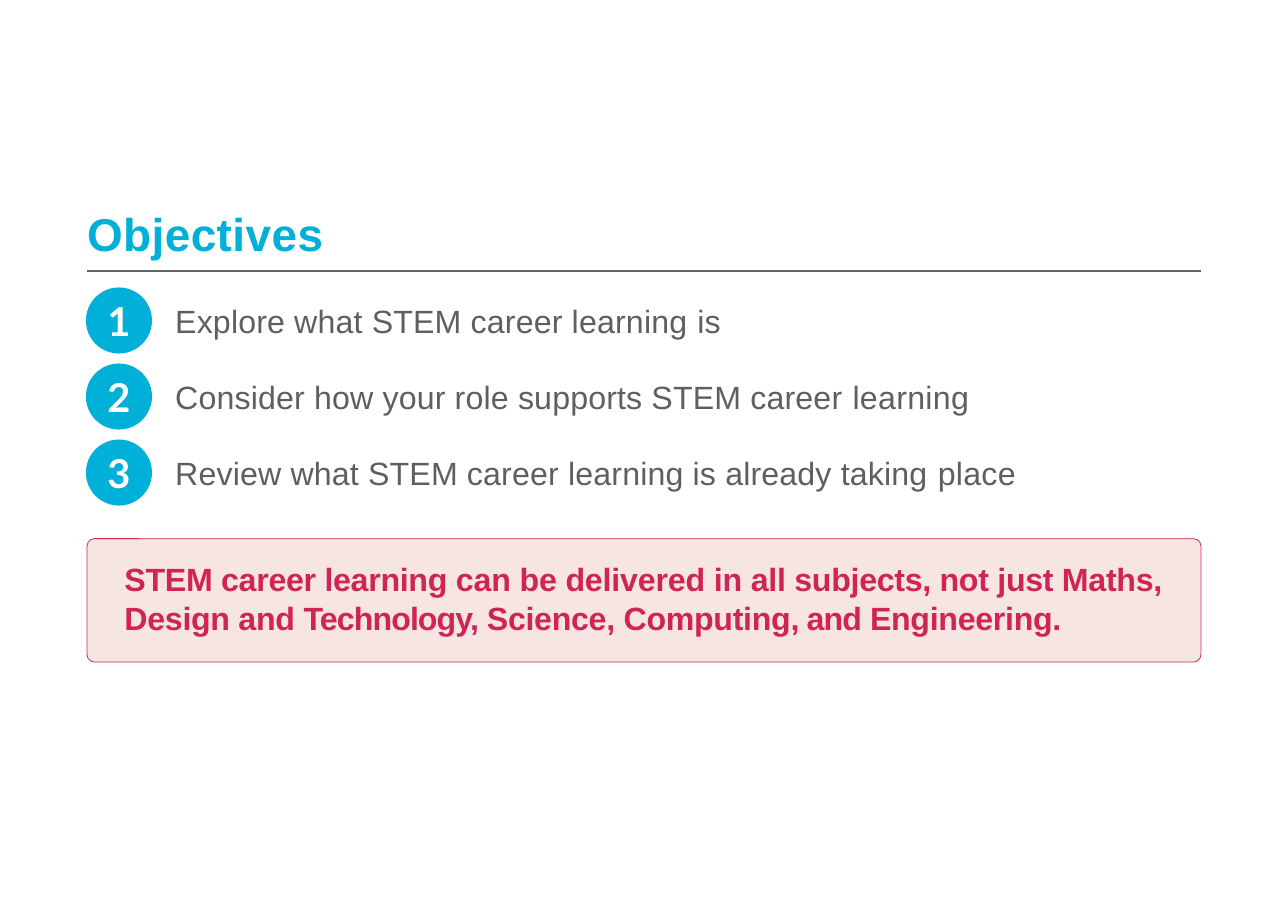
import pptx
import pptx.dml.color
import pptx.enum.shapes
import pptx.enum.text
import pptx.oxml.ns
import pptx.util
from lxml import etree

HEADING = [("Objectives", 0.3)]
OBJECTIVES = [
    [("Explore what STEM career learning ", 0.1), ("is", 0.2)],
    [("Consider how your role supports STEM career ", 0.1), ("learning", 0.2)],
    [("Review what STEM career learning is already taking ", 0.1), ("place", 0.2)],
]
MESSAGE = [
    ("STEM career learning ", -0.2),
    ("can be delivered in ", -0.1),
    ("all subjects, not just Maths, Design and ", -0.2),
    ("Technology, ", -0.6),
    ("Science, Computing", -0.2),
    (", and ", -0.6),
    ("Engineering.", -0.2),
]

CYAN, GREY, RULE_GREY = "00B0D8", "5D5F61", "636466"
CRIMSON, BLUSH, WHITE = "CF2553", "F7E5E3", "FFFFFF"

WIDTH, HEIGHT = 11.69, 8.27
MARGIN = 0.79
CONTENT_WIDTH = WIDTH - 2 * MARGIN
RULE_TOP = 2.46
BADGE = 0.6
FIRST_ROW, ROW_PITCH = 2.61, 0.69
OBJECTIVE_LEFT = 1.59
MESSAGE_TOP, MESSAGE_HEIGHT = 4.89, 1.12

inches = pptx.util.Inches
shapes_enum = pptx.enum.shapes.MSO_SHAPE
align = pptx.enum.text.PP_ALIGN
anchors = pptx.enum.text.MSO_ANCHOR


def colour(hex_string):
    return pptx.dml.color.RGBColor.from_string(hex_string)


def box(left, top, width, height):
    return [inches(length) for length in (left, top, width, height)]


def write(shape, pieces, size, ink, font="Arial", bold=False,
          alignment=align.LEFT, anchor=anchors.MIDDLE, margins=(0, 0, 0, 0)):
    frame = shape.text_frame
    frame.word_wrap = True
    frame.auto_size = pptx.enum.text.MSO_AUTO_SIZE.NONE
    frame.vertical_anchor = anchor
    (frame.margin_left, frame.margin_top,
     frame.margin_right, frame.margin_bottom) = [inches(m) for m in margins]
    paragraph = frame.paragraphs[0]
    paragraph.alignment = alignment
    for words, spacing in pieces:
        run = paragraph.add_run()
        run.text = words
        run.font.name = font
        run.font.size = pptx.util.Pt(size)
        run.font.bold = bold
        run.font.color.rgb = colour(ink)
        run.font._element.set("spc", str(round(spacing * 100)))


def filled(slide, preset, place, fill):
    shape = slide.shapes.add_shape(preset, *place)
    shape.shadow.inherit = False
    shape.fill.solid()
    shape.fill.fore_color.rgb = colour(fill)
    shape.line.fill.background()
    return shape


def add_heading(slide):
    title = slide.shapes.title
    title.left, title.top, title.width, title.height = box(
        MARGIN, 1.84, CONTENT_WIDTH, 0.55)
    write(title, HEADING, 30, CYAN, bold=True)
    rule = slide.shapes.add_connector(
        pptx.enum.shapes.MSO_CONNECTOR.STRAIGHT,
        inches(MARGIN), inches(RULE_TOP),
        inches(MARGIN + CONTENT_WIDTH), inches(RULE_TOP))
    rule.line.color.rgb = colour(RULE_GREY)
    rule.line.width = pptx.util.Pt(1)
    etree.SubElement(rule._element.spPr, pptx.oxml.ns.qn("a:effectLst"))


def add_objectives(slide):
    for row, objective in enumerate(OBJECTIVES):
        top = FIRST_ROW + row * ROW_PITCH
        badge = filled(slide, shapes_enum.OVAL,
                       box(MARGIN - 0.01, top, BADGE, BADGE), CYAN)
        write(badge, [(str(row + 1), 0.1)], 26, WHITE, font="Lato",
              bold=True, alignment=align.CENTER)
        label = slide.shapes.add_textbox(*box(
            OBJECTIVE_LEFT, top, MARGIN + CONTENT_WIDTH - OBJECTIVE_LEFT, BADGE))
        write(label, objective, 21, GREY)


def add_message(slide):
    panel = filled(slide, shapes_enum.ROUNDED_RECTANGLE,
                   box(MARGIN, MESSAGE_TOP, CONTENT_WIDTH, MESSAGE_HEIGHT), BLUSH)
    panel.adjustments[0] = 0.06
    panel.line.color.rgb = colour(CRIMSON)
    panel.line.width = pptx.util.Pt(0.5)
    write(panel, MESSAGE, 21, CRIMSON, bold=True, anchor=anchors.TOP,
          margins=(0.32, 0.17, 0.1, 0))


def main():
    deck = pptx.Presentation()
    deck.slide_width, deck.slide_height = inches(WIDTH), inches(HEIGHT)
    slide = deck.slides.add_slide(deck.slide_layouts[5])
    add_heading(slide)
    add_objectives(slide)
    add_message(slide)
    deck.save("out.pptx")


if __name__ == "__main__":
    main()
